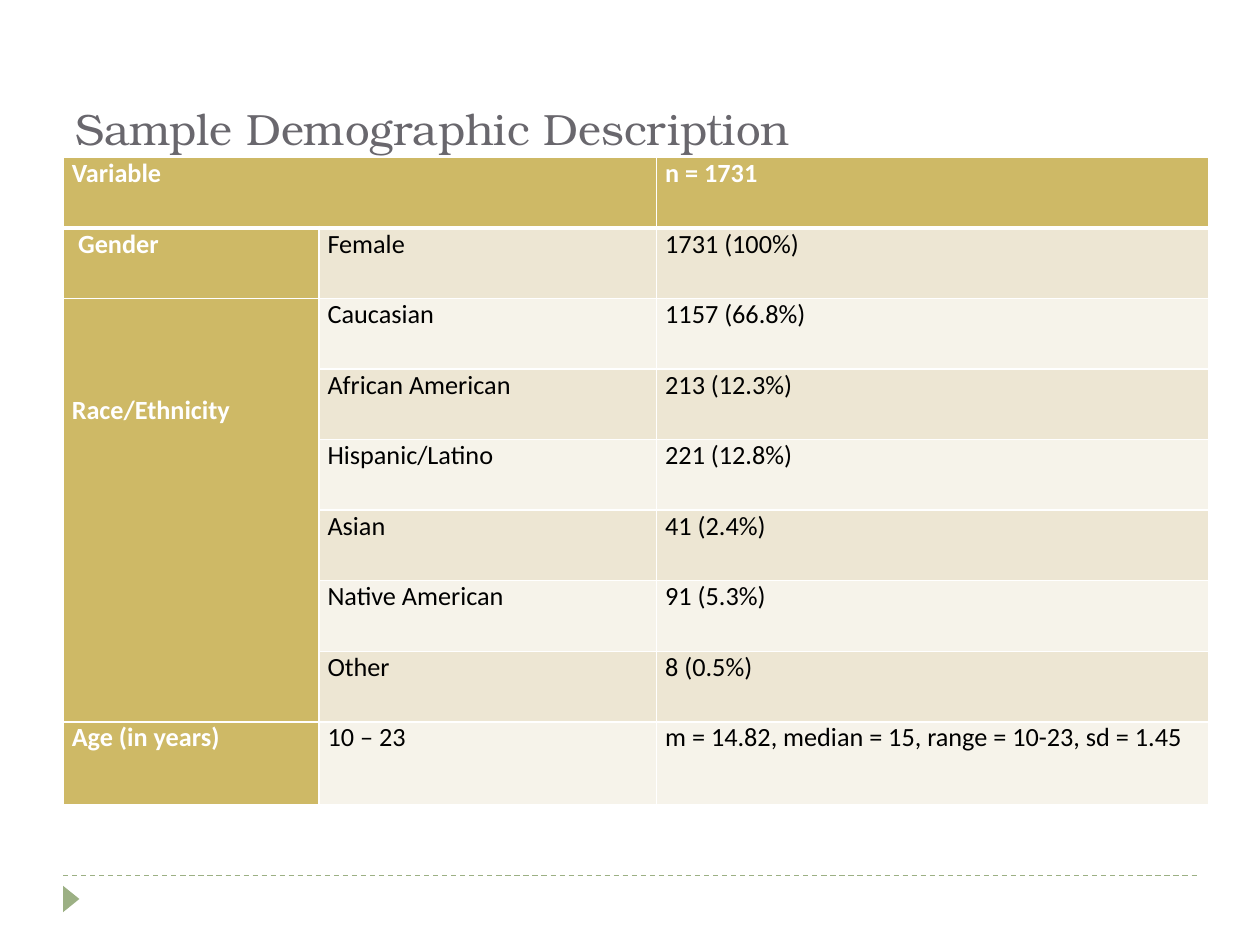
from dataclasses import dataclass

from lxml.etree import SubElement
from pptx import Presentation
from pptx.dml.color import RGBColor
from pptx.enum.dml import MSO_LINE
from pptx.enum.shapes import MSO_CONNECTOR, MSO_SHAPE
from pptx.enum.text import MSO_ANCHOR
from pptx.oxml import parse_xml
from pptx.oxml.ns import nsdecls, qn
from pptx.util import Inches, Pt

UNIT = 0.5
COLUMNS, ROWS = 20, 15
GREEN, GOLD, WHITE, BLACK, GREY = "9CB084", "CEB966", "FFFFFF", "000000", "69676D"
BANDS = ("EDE6D3", "F6F3EA")
COLUMN_SPANS = (4.06, 5.36, 8.76)
ROW_SPAN, LAST_ROW_SPAN = 1.12, 1.32


@dataclass(frozen=True)
class Box:
    """A place on the slide grid, in columns and rows."""
    column: float
    row: float
    width: float
    height: float

    def lengths(self):
        """Return left, top, width and height as slide lengths."""
        return [grid(n) for n in (self.column, self.row, self.width, self.height)]


@dataclass(frozen=True)
class Group:
    """A variable with its categories and their values."""
    name: str
    entries: tuple
    indent: float = 0.14
    drop: float = 0


GROUPS = (
    Group("Gender", (("Female", "1731 (100%)"),), indent=0.24),
    Group("Race/Ethnicity", (
        ("Caucasian", "1157 (66.8%)"),
        ("African American", "213 (12.3%)"),
        ("Hispanic/Latino", "221 (12.8%)"),
        ("Asian", "41 (2.4%)"),
        ("Native American", "91 (5.3%)"),
        ("Other", "8 (0.5%)"),
    ), drop=1.52),
    Group("Age (in years)", (
        ("10 – 23", "m = 14.82, median = 15, range = 10-23, sd = 1.45"),
    )),
)


def grid(count: float):
    """Turn a number of grid units into a length."""
    return Inches(count * UNIT)


def color(value: str):
    """Turn a hex string into a colour."""
    return RGBColor.from_string(value)


def write(frame, text: str, *, size=15, font="Calibri", ink=BLACK, bold=False):
    """Write one formatted run into a text frame."""
    run = frame.paragraphs[0].add_run()
    run.text = text
    run.font.size = Pt(size)
    run.font.name = font
    run.font.bold = bold
    run.font.color.rgb = color(ink)


def draw_rule(slide, row: float):
    """Draw a dashed rule across the content width."""
    rule = slide.shapes.add_connector(
        MSO_CONNECTOR.STRAIGHT, grid(1), grid(row), grid(COLUMNS - 1), grid(row))
    rule.line.color.rgb = color(GREEN)
    rule.line.width = Pt(0.75)
    rule.line.dash_style = MSO_LINE.DASH
    SubElement(rule._element.spPr, qn("a:effectLst"))


def draw_marker(slide, box: Box):
    """Draw the triangle that points right."""
    marker = slide.shapes.add_shape(MSO_SHAPE.ISOSCELES_TRIANGLE, *box.lengths())
    marker.rotation = 90
    marker.shadow.inherit = False
    marker.fill.solid()
    marker.fill.fore_color.rgb = color(GREEN)
    marker.line.fill.background()


def draw_title(slide, text: str, box: Box):
    """Draw the title at the bottom of its box."""
    frame = slide.shapes.add_textbox(*box.lengths()).text_frame
    frame.word_wrap = True
    frame.vertical_anchor = MSO_ANCHOR.BOTTOM
    write(frame, text, size=25, font="TeX Gyre Bonum", ink=GREY)


def add_borders(cell, top: float, bottom: float):
    """Give a cell white borders, with the top and bottom widths in points."""
    sides = {"lnL": 1, "lnR": 1, "lnT": top, "lnB": bottom}
    for position, (tag, width) in enumerate(sides.items()):
        border = parse_xml(
            f'<a:{tag} {nsdecls("a")} w="{Pt(width)}"><a:solidFill>'
            f'<a:srgbClr val="{WHITE}"/></a:solidFill></a:{tag}>')
        cell._tc.get_or_add_tcPr().insert(position, border)


def fill_cell(cell, text: str, fill: str, *, indent=0.14, drop=0.0, **style):
    """Set the fill, margins and text of a cell."""
    cell.fill.solid()
    cell.fill.fore_color.rgb = color(fill)
    cell.margin_left, cell.margin_right = grid(indent), grid(0.14)
    cell.margin_top, cell.margin_bottom = grid(drop), 0
    write(cell.text_frame, text, **style)


def draw_table(slide, column: float, row: float):
    """Draw the table of variables, categories and values."""
    row_count = 1 + sum(len(group.entries) for group in GROUPS)
    spans = [ROW_SPAN] * (row_count - 1) + [LAST_ROW_SPAN]
    box = Box(column, row, sum(COLUMN_SPANS), sum(spans))
    table = slide.shapes.add_table(
        row_count, len(COLUMN_SPANS), *box.lengths()).table
    for table_column, span in zip(table.columns, COLUMN_SPANS):
        table_column.width = grid(span)
    for table_row, span in zip(table.rows, spans):
        table_row.height = grid(span)

    heading = {"ink": WHITE, "bold": True}
    table.cell(0, 0).merge(table.cell(0, 1))
    fill_cell(table.cell(0, 0), "Variable", GOLD, **heading)
    fill_cell(table.cell(0, 2), "n = 1731", GOLD, **heading)
    index = 1
    for group in GROUPS:
        name_cell = table.cell(index, 0)
        if len(group.entries) > 1:
            name_cell.merge(table.cell(index + len(group.entries) - 1, 0))
        fill_cell(name_cell, group.name, GOLD,
                  indent=group.indent, drop=group.drop, **heading)
        for entry in group.entries:
            for position, text in enumerate(entry, start=1):
                fill_cell(table.cell(index, position), text, BANDS[(index - 1) % 2])
            index += 1
    for number in range(row_count):
        for cell in table.rows[number].cells:
            add_borders(cell, top=3 if number == 1 else 1, bottom=3 if number == 0 else 1)


def main():
    """Build the slide and save it."""
    presentation = Presentation()
    presentation.slide_width, presentation.slide_height = grid(COLUMNS), grid(ROWS)
    slide = presentation.slides.add_slide(presentation.slide_layouts[6])
    for row in (13.9, 2.5):
        draw_rule(slide, row)
    draw_marker(slide, Box(0.92, 14.14, 0.42, 0.26))
    draw_title(slide, "Sample Demographic Description", Box(1, 0.04, 18, 2.5))
    draw_table(slide, 1, 2.5)
    presentation.save("out.pptx")


if __name__ == "__main__":
    main()
